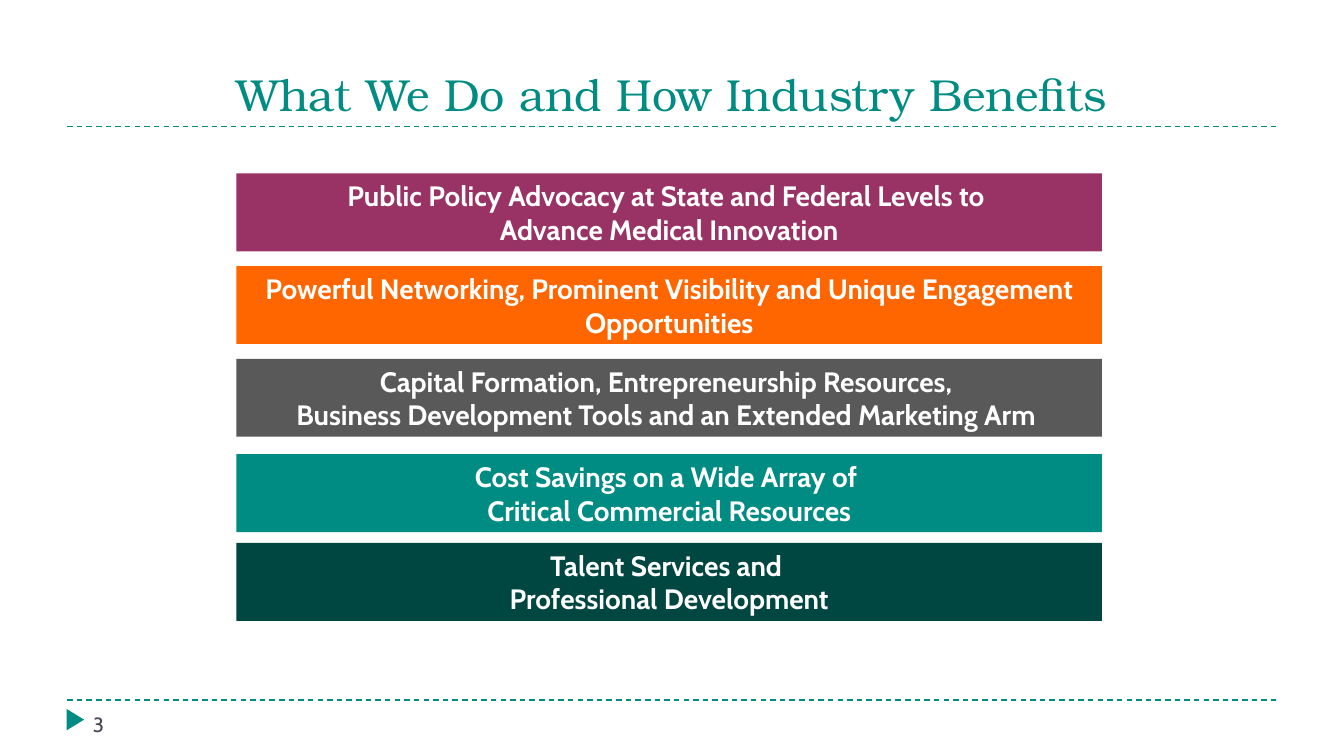
"""Build the slide on what we do and how industry benefits."""
from lxml import etree
from pptx import Presentation
from pptx.dml.color import RGBColor
from pptx.enum.dml import MSO_LINE
from pptx.enum.shapes import MSO_CONNECTOR, MSO_SHAPE
from pptx.enum.text import MSO_ANCHOR, MSO_AUTO_SIZE, PP_ALIGN
from pptx.oxml.ns import qn
from pptx.util import Inches, Pt

DASH = MSO_LINE.DASH
STRAIGHT = MSO_CONNECTOR.STRAIGHT
RECTANGLE, TRIANGLE = MSO_SHAPE.RECTANGLE, MSO_SHAPE.ISOSCELES_TRIANGLE
TOP, BOTTOM = MSO_ANCHOR.TOP, MSO_ANCHOR.BOTTOM
NO_AUTOFIT = MSO_AUTO_SIZE.NONE
LEFT, CENTER = PP_ALIGN.LEFT, PP_ALIGN.CENTER

COLORS = {
    "teal": "008C82",
    "dark teal": "004641",
    "plum": "993366",
    "orange": "FF6600",
    "gray": "595959",
    "slate": "464653",
    "white": "FFFFFF",
}
BENEFITS = [
    (1.29, "plum", "Public Policy Advocacy at State and Federal Levels to \nAdvance Medical Innovation"),
    (1.98, "orange", "Powerful Networking, Prominent Visibility and Unique Engagement Opportunities"),
    (2.67, "gray", "Capital Formation, Entrepreneurship Resources, \n"
                   "Business Development Tools and an Extended Marketing Arm "),
    (3.38, "teal", "Cost Savings on a Wide Array of \nCritical Commercial Resources"),
    (4.04, "dark teal", "Talent Services and \nProfessional Development"),
]
BAR_LEFT, BAR_WIDTH, BAR_HEIGHT = 1.76, 6.44, 0.58


def write(shape, text, font_name, size, color, alignment, anchor, bold=False):
    frame = shape.text_frame
    frame.text = text
    frame.word_wrap = True
    frame.auto_size = NO_AUTOFIT
    frame.vertical_anchor = anchor
    frame.margin_left = frame.margin_right = Inches(0.07)
    frame.margin_top = frame.margin_bottom = Inches(0.04)
    for paragraph in frame.paragraphs:
        paragraph.alignment = alignment
        for run in paragraph.runs:
            run.font.name = font_name
            run.font.size = Pt(size)
            run.font.bold = bold
            run.font.color.rgb = RGBColor.from_string(COLORS[color])


def add_filled(kind, left, top, width, height, color):
    shape = slide.shapes.add_shape(kind, Inches(left), Inches(top), Inches(width), Inches(height))
    shape.shadow.inherit = False
    shape.fill.solid()
    shape.fill.fore_color.rgb = RGBColor.from_string(COLORS[color])
    shape.line.fill.background()
    return shape


presentation = Presentation()
presentation.slide_width = Inches(10)
presentation.slide_height = Inches(10 * 9 / 16)
slide = presentation.slides.add_slide(presentation.slide_layouts[5])

for rule_top in (0.94, 5.21):
    rule = slide.shapes.add_connector(
        STRAIGHT, Inches(0.5), Inches(rule_top), Inches(9.5), Inches(rule_top))
    rule.line.color.rgb = RGBColor.from_string(COLORS["teal"])
    rule.line.width = Pt(0.75)
    rule.line.dash_style = DASH
    etree.SubElement(rule._element.spPr, qn("a:effectLst"))

marker = add_filled(TRIANGLE, 0.48, 5.29, 0.16, 0.13, "teal")
marker.rotation = 90

title = slide.shapes.title
title.left, title.top = Inches(1.62), Inches(0.13)
title.width, title.height = Inches(6.75), Inches(0.81)
write(title, "What We Do and How Industry Benefits", "TeX Gyre Bonum", 24, "teal", CENTER, BOTTOM)

for bar_top, color, text in BENEFITS:
    bar = add_filled(RECTANGLE, BAR_LEFT, bar_top, BAR_WIDTH, BAR_HEIGHT, color)
    write(bar, text, "Cabin", 15, "white", CENTER, TOP, bold=True)

page_number = slide.shapes.add_textbox(Inches(0.62), Inches(5.26), Inches(1.62), Inches(0.3))
write(page_number, "3", "Cabin", 11, "slate", LEFT, TOP)

presentation.save("out.pptx")
